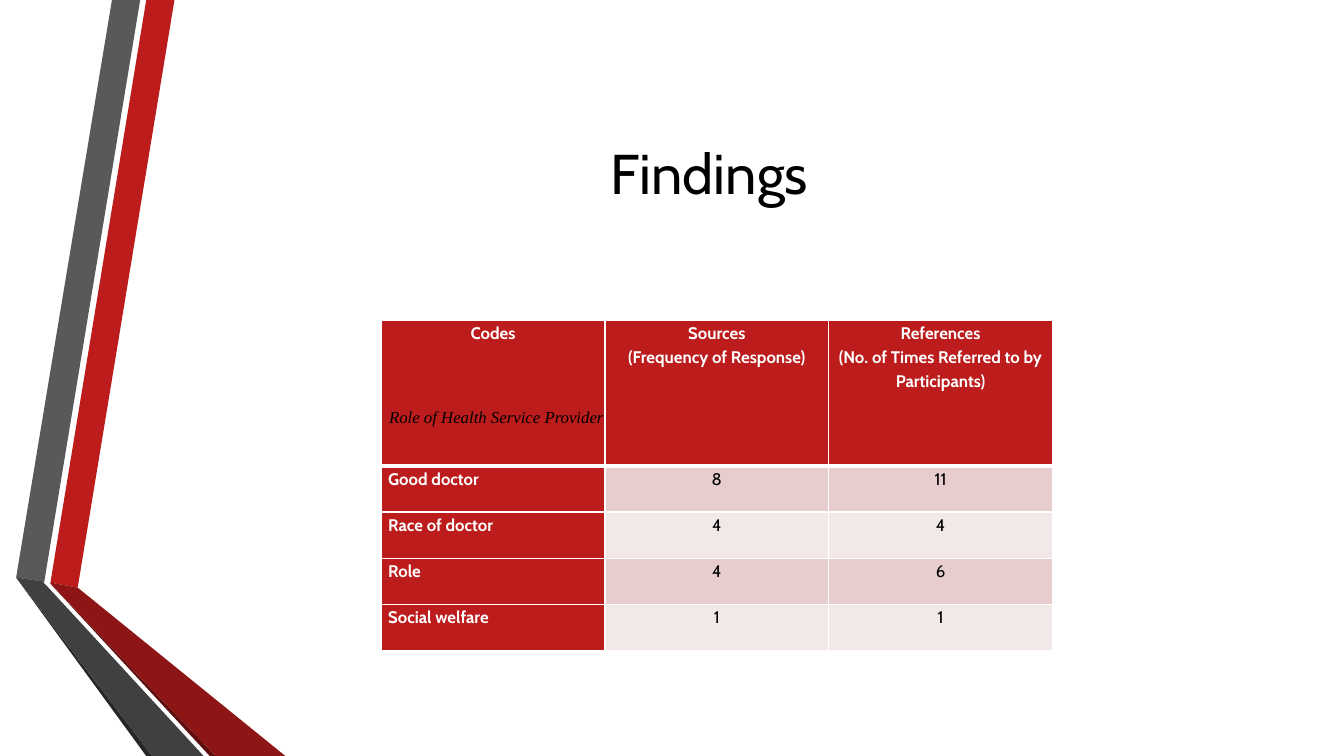
from dataclasses import dataclass

from lxml import etree
from pptx import Presentation
from pptx.dml.color import RGBColor
from pptx.enum.text import MSO_ANCHOR, PP_ALIGN
from pptx.oxml.ns import qn
from pptx.util import Inches, Pt

LEFT, MID = PP_ALIGN.LEFT, PP_ALIGN.CENTER
TOP, CORE = MSO_ANCHOR.TOP, MSO_ANCHOR.MIDDLE
WIDTH, HEIGHT = Inches(13.33), Inches(7.5)


@dataclass(frozen=True)
class Theme:
    red: str = "BC1C1C"
    wine: str = "8D1515"
    maroon: str = "5E0E0E"
    gray: str = "595959"
    dark: str = "404040"
    coal: str = "262626"
    rose: str = "E7CDCD"
    blush: str = "F3E8E8"
    white: str = "FFFFFF"
    black: str = "000000"
    sans: str = "Cabin"
    serif: str = "Times New Roman"
    head: int = 40
    body: int = 12


THEME = Theme()

# Ribbon corners in percent of the slide, from back to front
BANDS = [
    (THEME.red, [(3.75, 77.07), (5.78, 77.73), (12.98, 0), (10.88, 0)]),
    (THEME.gray, [(10.43, 0), (8.33, 0), (1.2, 76.4), (3.3, 76.93)]),
    (THEME.coal, [(1.2, 76.4), (10.88, 100), (11.33, 100)]),
    (THEME.maroon, [(3.75, 77.2), (15.6, 100), (16.05, 100)]),
    (THEME.wine, [(3.75, 77.2), (16.05, 100), (21.23, 100), (5.78, 77.73),
                  (3.75, 77.07)]),
    (THEME.dark, [(15.15, 100), (3.6, 77.73), (3.23, 77.07), (3.3, 76.93),
                  (1.2, 76.4), (11.33, 100)]),
]

HEADS = [
    ["Codes"],
    ["Sources", "(Frequency of Response)"],
    ["References", "(No. of Times Referred to by Participants)"],
]
ROWS = [
    ("Good doctor", 8, 11),
    ("Race of doctor", 4, 4),
    ("Role", 4, 6),
    ("Social welfare", 1, 1),
]


def across(part):
    return round(WIDTH * part / 100)


def down(part):
    return round(HEIGHT * part / 100)


def box(x, y, w, h):
    return across(x), down(y), across(w), down(h)


def apply(item, values):
    for name, value in values.items():
        setattr(item, name, value)


def write(frame, lines, align, color, font, space=1.0):
    """Fill a text frame, one paragraph for each line."""
    for i, line in enumerate(lines):
        para = frame.paragraphs[0] if i == 0 else frame.add_paragraph()
        apply(para, {"alignment": align, "line_spacing": space})
        run = para.add_run()
        run.text = line
        apply(run.font, font)
        run.font.color.rgb = RGBColor.from_string(color)


def add_band(slide, color, points):
    spots = [(across(x), down(y)) for x, y in points]
    path = slide.shapes.build_freeform(*spots[0], scale=1.0)
    path.add_line_segments(spots[1:], close=True)
    band = path.convert_to_shape()
    band.shadow.inherit = False
    band.fill.solid()
    band.fill.fore_color.rgb = RGBColor.from_string(color)
    band.line.fill.background()


def add_text(slide, place, text, anchor, align, font):
    frame = slide.shapes.add_textbox(*place).text_frame
    apply(frame, {"word_wrap": True, "vertical_anchor": anchor})
    write(frame, [text], align, THEME.black, font)


def add_edges(cell, sides):
    props = cell._tc.get_or_add_tcPr()
    for side, width in sides.items():
        edge = etree.SubElement(props, qn(f"a:ln{side}"), w=str(Pt(width)))
        fill = etree.SubElement(edge, qn("a:solidFill"))
        etree.SubElement(fill, qn("a:srgbClr"), val=THEME.white)


def style_cell(cell, lines, align, fill, color, bold, sides):
    apply(cell, {"margin_left": Inches(0.07), "margin_right": Inches(0.07),
                 "margin_top": 0, "margin_bottom": 0,
                 "vertical_anchor": TOP})
    add_edges(cell, sides)
    cell.fill.solid()
    cell.fill.fore_color.rgb = RGBColor.from_string(fill)
    font = {"name": THEME.sans, "size": Pt(THEME.body), "bold": bold}
    write(cell.text_frame, lines, align, color, font, 1.15)


def add_grid(slide):
    tall, low, wide = 19.2, 6.13, 16.65
    place = box(28.36, 42.4, wide * len(HEADS), tall + low * len(ROWS))
    table = slide.shapes.add_table(len(ROWS) + 1, len(HEADS), *place).table
    for col in table.columns:
        col.width = across(wide)
    for r, row in enumerate(table.rows):
        row.height = down(low if r else tall)

    # Header row
    thin = {"L": 1, "R": 1, "T": 1, "B": 1}
    for c, lines in enumerate(HEADS):
        style_cell(table.cell(0, c), lines, MID, THEME.red, THEME.white,
                   True, {**thin, "B": 3})

    # Code names, then banded counts
    for r, (code, *counts) in enumerate(ROWS, 1):
        sides = {**thin, "T": 3 if r == 1 else 1}
        style_cell(table.cell(r, 0), [code], LEFT, THEME.red, THEME.white,
                   True, sides)
        tint = THEME.rose if r % 2 else THEME.blush
        for c, count in enumerate(counts, 1):
            style_cell(table.cell(r, c), [str(count)], MID, tint,
                       THEME.black, False, sides)


def main():
    deck = Presentation()
    apply(deck, {"slide_width": WIDTH, "slide_height": HEIGHT})
    slide = deck.slides.add_slide(deck.slide_layouts[6])

    # Ribbons on the left
    for color, points in BANDS:
        add_band(slide, color, points)

    # Title
    add_text(slide, box(12.15, 10, 82.22, 25.6), "Findings ", CORE, MID,
             {"name": THEME.sans, "size": Pt(THEME.head)})

    # Table and the label over its first cell
    add_grid(slide)
    add_text(slide, box(28.21, 53.2, 71.79, 6.67),
             "Role of Health Service Provider", TOP, LEFT,
             {"name": THEME.serif, "size": Pt(THEME.body), "italic": True})

    deck.save("out.pptx")


if __name__ == "__main__":
    main()
